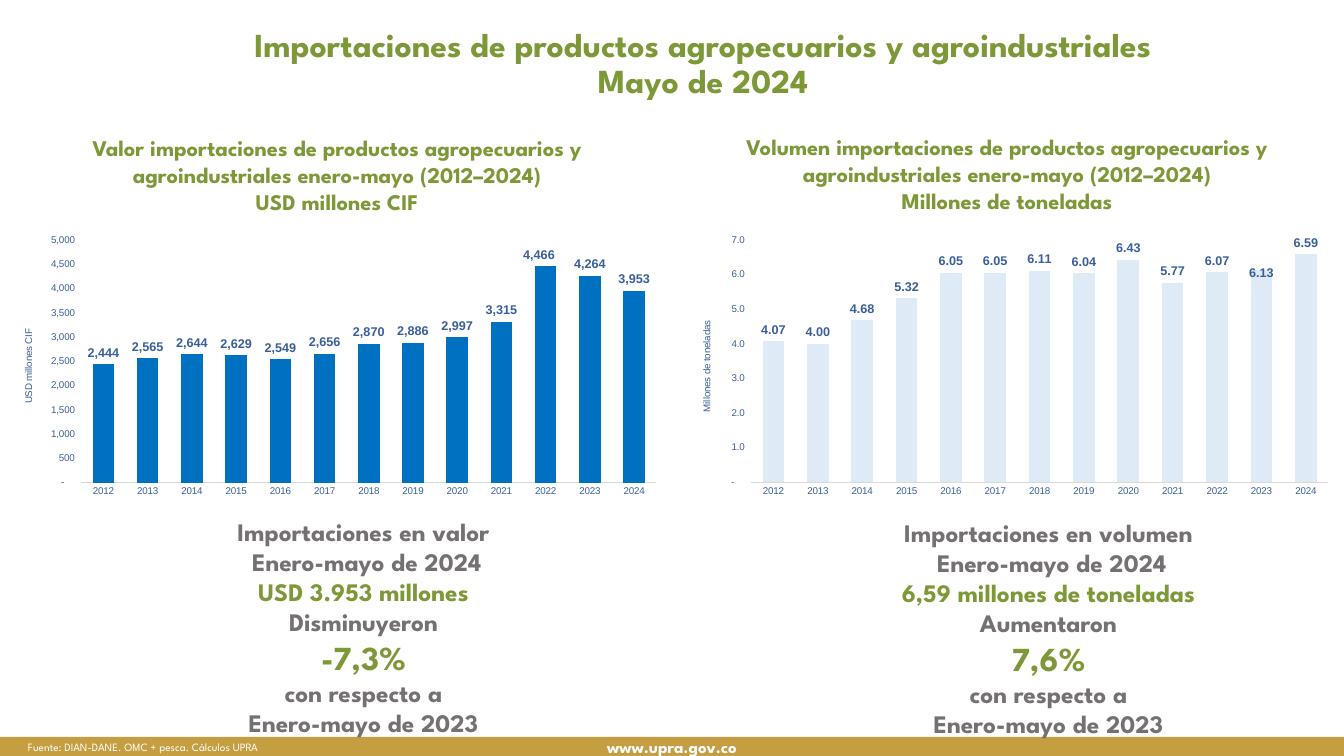
from copy import deepcopy
from lxml import etree
from pptx import Presentation
from pptx import util as u
from pptx.chart.data import CategoryChartData
from pptx.dml.color import RGBColor
from pptx.enum import chart as ch, shapes, text
from pptx.oxml.ns import qn

PX = 914400 / 100.8  # EMU in one px
HEX = {"green": "7D9837", "gray": "767171", "gold": "C59E41", "white": "FFFFFF",
       "ink": "395F9B", "axis": "D9D9D9", "blue": "0070C0", "pale": "DEEBF7"}
FACE = "League Spartan"
MID, JUST = text.PP_ALIGN.CENTER, text.PP_ALIGN.JUSTIFY

# Content: each line is (words, size, colour)
TITLE = [("Importaciones de productos agropecuarios y agroindustriales\vMayo de 2024",
          24, "green")]
SITE = [("www.upra.gov.co", 12, "white")]
SOURCE = [("Fuente: DIAN-DANE. OMC + pesca. Cálculos UPRA", 8, "white")]
YEARS = [str(y) for y in range(2012, 2025)]
MONEY = '_-* #,##0_-;\\-* #,##0_-;_-* "-"??_-;_-@_-'
TONS = '_-* #,##0.0_-;\\-* #,##0.0_-;_-* "-"??_-;_-@_-'

SIDES = [
    {"head": "Valor importaciones de productos agropecuarios y "
             "agroindustriales enero-mayo (2012–2024)",
     "unit": "USD millones CIF", "head_at": (2, 129, 670, 92),
     "facts": ("Importaciones en valor", "USD 3.953 millones", "Disminuyeron", "-7,3%"),
     "fact_at": (147, 511, 433, 234),
     "chart_at": (0, 205, 667, 347), "plot": (0.122, 0.102, 0.862, 0.698),
     "name_at": (21, 122), "fill": "blue", "top": 5000, "step": 500,
     "scale": MONEY, "label": MONEY, "move": (10, -7, 0),
     "vals": [2444, 2565, 2644, 2629, 2549, 2656, 2870, 2886, 2997,
              3315, 4466, 4264, 3953]},
    {"head": "Volumen importaciones de productos agropecuarios y "
             "agroindustriales enero-mayo (2012–2024)",
     "unit": "Millones de toneladas", "head_at": (672, 128, 670, 92),
     "facts": ("Importaciones en volumen", "6,59 millones de toneladas",
               "Aumentaron", "7,6%"),
     "fact_at": (832, 512, 433, 234),
     "chart_at": (661, 202, 669, 347), "plot": (0.135, 0.11, 0.862, 0.698),
     "name_at": (38, 117), "fill": "pale", "top": 7, "step": 1,
     "scale": TONS, "label": "#,##0.00", "move": (11, -2, 14),
     "vals": [4.07, 4, 4.68, 5.32, 6.05, 6.05, 6.11, 6.04, 6.43,
              5.77, 6.07, 6.13, 6.59]},
]


def emu(box):
    return [round(n * PX) for n in box]


def rgb(key):
    return RGBColor.from_string(HEX[key])


def style(font, size, color, face=FACE, bold=True):
    for key, val in {"size": u.Pt(size), "name": face, "bold": bold}.items():
        setattr(font, key, val)
    font.color.rgb = rgb(color)


def write(frame, lines, align=MID, bold=True, gap=None):
    frame.word_wrap = True
    for i, (words, size, color) in enumerate(lines):
        para = frame.paragraphs[0] if i == 0 else frame.add_paragraph()
        para.text, para.alignment, para.line_spacing = words, align, gap
        for run in para.runs:
            style(run.font, size, color, bold=bold)


def add_text(box, lines, **look):
    write(slide.shapes.add_textbox(*emu(box)).text_frame, lines, **look)


def sub(node, tag, val):
    etree.SubElement(node, qn("c:" + tag)).set("val", str(val))


def place(node, spot, pairs):
    """Give a chart part a manual layout as its child number spot."""
    old = node.find(qn("c:layout"))
    if old is not None:
        node.remove(old)
    lay = etree.Element(qn("c:layout"))
    node.insert(spot, lay)
    man = etree.SubElement(lay, qn("c:manualLayout"))
    for tag, val in pairs:
        sub(man, tag, val)


def shift(labels, idx, dx, dy):
    """Move one data label by a fraction of the chart."""
    lab = etree.Element(qn("c:dLbl"))
    sub(lab, "idx", idx)
    place(lab, 1, [("x", dx), ("y", dy)])
    for tag in ("numFmt", "txPr"):
        lab.append(deepcopy(labels.find(qn("c:" + tag))))
    sub(lab, "dLblPos", "outEnd")
    for tag in ("LegendKey", "Val", "CatName", "SerName", "Percent", "BubbleSize"):
        sub(lab, "show" + tag, int(tag == "Val"))
    labels.insert(0, lab)


def add_bars(side):
    data = CategoryChartData()
    data.categories = YEARS
    data.add_series("Series 1", side["vals"])
    chart = slide.shapes.add_chart(ch.XL_CHART_TYPE.COLUMN_CLUSTERED,
                                   *emu(side["chart_at"]), data).chart
    chart.has_title = chart.has_legend = False
    chart.font.size, chart.font.name = u.Pt(10), "Arial"
    wide, high = side["chart_at"][2:]

    # Bars and their labels
    plot = chart.plots[0]
    plot.gap_width, plot.overlap, plot.vary_by_categories = 105, 74, False
    bars = plot.series[0]
    bars.format.fill.solid()
    bars.format.fill.fore_color.rgb = rgb(side["fill"])
    labels = bars.data_labels
    for key, val in {"show_value": True, "number_format": side["label"],
                     "number_format_is_linked": False,
                     "position": ch.XL_LABEL_POSITION.OUTSIDE_END}.items():
        setattr(labels, key, val)
    style(labels.font, 9, "ink", "Arial")
    idx, dx, dy = side["move"]
    shift(next(chart.element.iter(qn("c:dLbls"))), idx,
          round(dx / wide, 2), round(dy / high, 2))

    # Axes
    cat, val = chart.category_axis, chart.value_axis
    for axis in (cat, val):
        axis.has_major_gridlines = False
        axis.major_tick_mark = axis.minor_tick_mark = ch.XL_TICK_MARK.NONE
        style(axis.tick_labels.font, 7, "ink", "Arial", False)
    cat.format.line.color.rgb = rgb("axis")
    cat.format.line.width = u.Pt(0.75)
    val.format.line.fill.background()
    val.minimum_scale, val.maximum_scale = 0, side["top"]
    val.major_unit = side["step"]
    val.tick_labels.number_format = side["scale"]
    val.tick_labels.number_format_is_linked = False

    # Axis title and plot area
    name = val.axis_title.text_frame
    name.text = side["unit"]
    style(name.paragraphs[0].runs[0].font, 7, "ink", "Arial", False)
    title = next(chart.element.iter(qn("c:title")))
    body = next(title.iter(qn("a:bodyPr")))
    body.set("rot", "-5400000")
    body.set("vert", "horz")
    x, y = side["name_at"]
    place(title, 1, [("xMode", "edge"), ("yMode", "edge"),
                     ("x", round(x / wide, 3)), ("y", round(y / high, 3))])
    area = next(chart.element.iter(qn("c:plotArea")))
    place(area, 0, [("layoutTarget", "inner"), ("xMode", "edge"), ("yMode", "edge"),
                    *zip("xywh", side["plot"])])


deck = Presentation()
deck.slide_width, deck.slide_height = emu((1344, 756))
slide = deck.slides.add_slide(deck.slide_layouts[6])

# Footer band
band = slide.shapes.add_shape(shapes.MSO_SHAPE.RECTANGLE, *emu((0, 737, 1344, 19)))
band.shadow.inherit = False
band.fill.solid()
band.fill.fore_color.rgb = rgb("gold")
band.line.fill.background()
band.text_frame.vertical_anchor = text.MSO_ANCHOR.MIDDLE
write(band.text_frame, SITE)

# Title
add_text((218, 23, 970, 108), TITLE, gap=0.9)

# Two halves: heading, chart, key facts
for side in SIDES:
    add_text(side["head_at"], [(side["head"], 16, "green"), (side["unit"], 16, "green")])
    add_bars(side)
    what, total, trend, rate = side["facts"]
    add_text(side["fact_at"], [
        (what, 18, "gray"), (" Enero-mayo de 2024", 18, "gray"), (total, 18, "green"),
        (trend, 18, "gray"), (rate, 24, "green"), ("con respecto a", 18, "gray"),
        ("Enero-mayo de 2023", 18, "gray")])

# Source note
add_text((18, 735, 1301, 24), SOURCE, align=JUST, bold=False)

deck.save("out.pptx")
